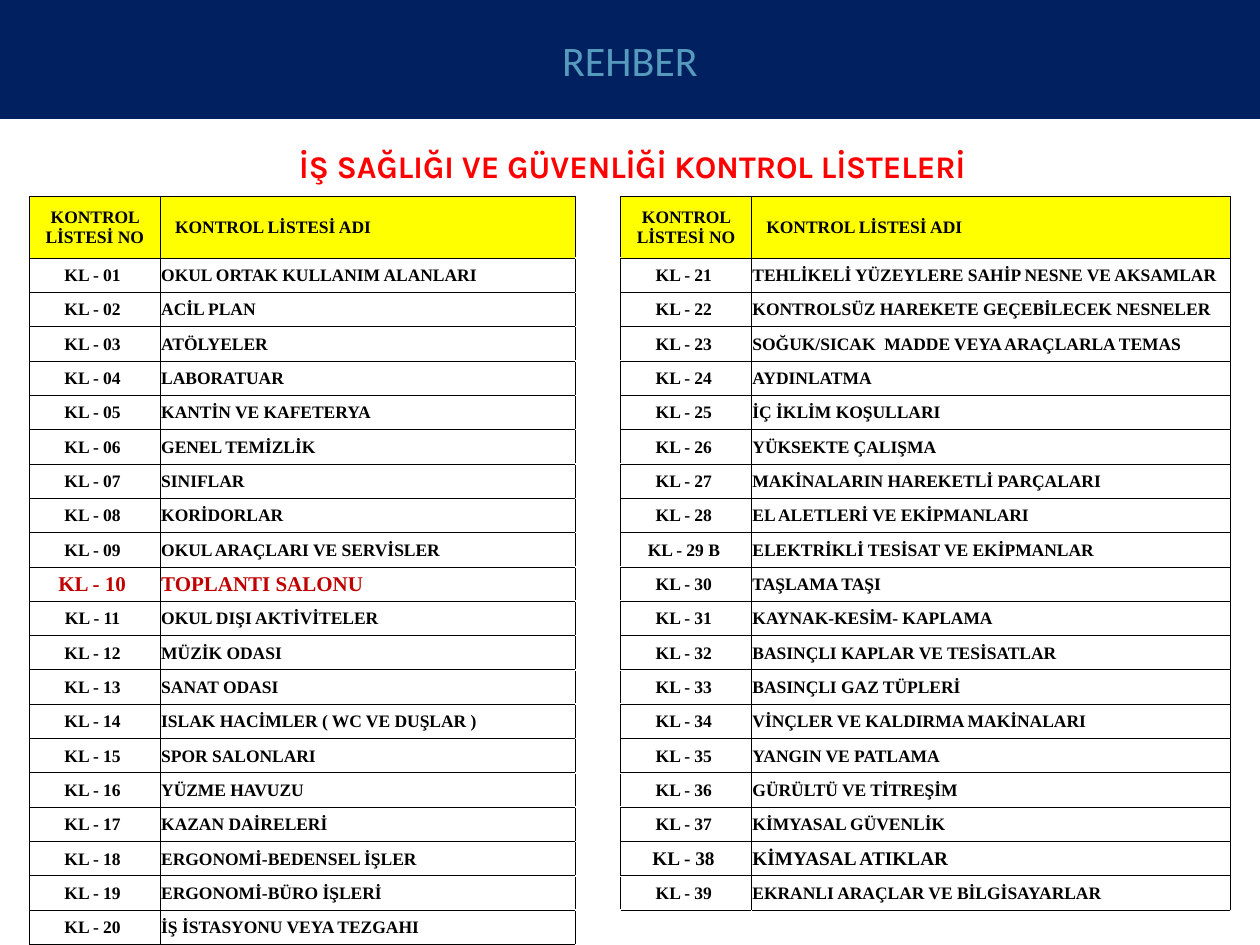
from lxml.etree import SubElement
from pptx import Presentation
from pptx.dml.color import RGBColor
from pptx.enum.shapes import MSO_SHAPE
from pptx.enum.text import MSO_ANCHOR, PP_ALIGN
from pptx.oxml import parse_xml
from pptx.oxml.ns import nsdecls, qn
from pptx.util import Cm, Pt

COLORS = {
    "navy": "002060", "blue": "569BBE", "red": "FF0000", "dark_red": "C00000",
    "yellow": "FFFF00", "black": "000000",
}
BANNER = "REHBER"
HEADING = "İŞ SAĞLIĞI VE GÜVENLİĞİ KONTROL LİSTELERİ"
HEADERS = ("KONTROL LİSTESİ NO", "KONTROL LİSTESİ ADI")
CHECKLISTS = [
    "OKUL ORTAK KULLANIM ALANLARI",
    "ACİL PLAN",
    "ATÖLYELER",
    "LABORATUAR",
    "KANTİN VE KAFETERYA",
    "GENEL TEMİZLİK",
    "SINIFLAR",
    "KORİDORLAR",
    "OKUL ARAÇLARI VE SERVİSLER",
    "TOPLANTI SALONU",
    "OKUL DIŞI AKTİVİTELER",
    "MÜZİK ODASI",
    "SANAT ODASI",
    "ISLAK HACİMLER ( WC VE DUŞLAR )",
    "SPOR SALONLARI",
    "YÜZME HAVUZU",
    "KAZAN DAİRELERİ",
    "ERGONOMİ-BEDENSEL İŞLER",
    "ERGONOMİ-BÜRO İŞLERİ",
    "İŞ İSTASYONU VEYA TEZGAHI",
    "TEHLİKELİ YÜZEYLERE SAHİP NESNE VE AKSAMLAR",
    "KONTROLSÜZ HAREKETE GEÇEBİLECEK NESNELER",
    "SOĞUK/SICAK  MADDE VEYA ARAÇLARLA TEMAS",
    "AYDINLATMA",
    "İÇ İKLİM KOŞULLARI",
    "YÜKSEKTE ÇALIŞMA",
    "MAKİNALARIN HAREKETLİ PARÇALARI",
    "EL ALETLERİ VE EKİPMANLARI",
    "ELEKTRİKLİ TESİSAT VE EKİPMANLAR",
    "TAŞLAMA TAŞI",
    "KAYNAK-KESİM- KAPLAMA",
    "BASINÇLI KAPLAR VE TESİSATLAR",
    "BASINÇLI GAZ TÜPLERİ",
    "VİNÇLER VE KALDIRMA MAKİNALARI",
    "YANGIN VE PATLAMA",
    "GÜRÜLTÜ VE TİTREŞİM",
    "KİMYASAL GÜVENLİK",
    "KİMYASAL ATIKLAR",
    "EKRANLI ARAÇLAR VE BİLGİSAYARLAR",
]
SUFFIXES = {29: "B "}
EMPHASIS = {10: (12, "dark_red"), 38: (11, "black")}
PER_SIDE = 20
COL_WIDTHS = (2.64, 8.37, 0.91, 2.64, 9.66)
GAP_COL = 2
TABLE_LEFT, TABLE_TOP, TABLE_HEIGHT, HEADER_HEIGHT = 0.59, 3.96, 15.1, 1.24
HEADER_INDENT = 0.3


def rgb(name):
    return RGBColor.from_string(COLORS[name])


def write(tf, text, font, size, color, bold=False, align=PP_ALIGN.CENTER):
    tf.word_wrap = True
    p = tf.paragraphs[0]
    p.text = text
    p.alignment = align
    for r in p.runs:
        r.font.name = font
        r.font.size = Pt(size)
        r.font.bold = bold
        r.font.color.rgb = rgb(color)


def set_borders(cell, sides):
    tcPr = cell._tc.get_or_add_tcPr()
    for i, side in enumerate(sides):
        tcPr.insert(i, parse_xml(
            f'<a:ln{side} {nsdecls("a")} w="6350"><a:solidFill>'
            f'<a:srgbClr val="{COLORS["black"]}"/></a:solidFill></a:ln{side}>'))


def write_pair(table, row, first_col, texts, size=10, color="black"):
    for i, align in enumerate((PP_ALIGN.CENTER, PP_ALIGN.LEFT)):
        cell = table.cell(row, first_col + i)
        write(cell.text_frame, texts[i], "Times New Roman", size, color, True, align)
        set_borders(cell, "LRTB")


def prepare_cells(table):
    for cell in table.iter_cells():
        cell.margin_left = cell.margin_right = cell.margin_top = Cm(0.02)
        cell.margin_bottom = 0
        cell.vertical_anchor = MSO_ANCHOR.MIDDLE
        cell.fill.background()
        SubElement(cell.text_frame.paragraphs[0]._p, qn("a:endParaRPr"), sz="1000")


def add_checklists(slide):
    table = slide.shapes.add_table(
        PER_SIDE + 1, len(COL_WIDTHS), Cm(TABLE_LEFT), Cm(TABLE_TOP),
        Cm(sum(COL_WIDTHS)), Cm(TABLE_HEIGHT)).table
    table.first_row = table.horz_banding = False
    for col, width in zip(table.columns, COL_WIDTHS):
        col.width = Cm(width)
    for row in table.rows:
        row.height = Cm((TABLE_HEIGHT - HEADER_HEIGHT) / PER_SIDE)
    table.rows[0].height = Cm(HEADER_HEIGHT)
    prepare_cells(table)

    for first_col in (0, GAP_COL + 1):
        write_pair(table, 0, first_col, HEADERS)
        table.cell(0, first_col + 1).margin_left = Cm(HEADER_INDENT)
        for col in (first_col, first_col + 1):
            table.cell(0, col).fill.solid()
            table.cell(0, col).fill.fore_color.rgb = rgb("yellow")

    for i, name in enumerate(CHECKLISTS):
        side, row = divmod(i, PER_SIDE)
        number = i + 1
        code = f"KL - {number:02d} {SUFFIXES.get(number, '')}"
        size, color = EMPHASIS.get(number, (10, "black"))
        write_pair(table, row + 1, side * (GAP_COL + 1), (code, name), size, color)

    for row in range(PER_SIDE):
        set_borders(table.cell(row, GAP_COL), "LR")
    set_borders(table.cell(PER_SIDE, GAP_COL), "L")
    for col in (GAP_COL + 1, GAP_COL + 2):
        set_borders(table.cell(PER_SIDE, col), "T")


def main():
    prs = Presentation()
    prs.slide_width, prs.slide_height = Cm(25.4), Cm(19.05)
    slide = prs.slides.add_slide(prs.slide_layouts[6])

    heading = slide.shapes.add_textbox(Cm(0.05), Cm(2.34), Cm(25.4), Cm(2))
    heading.text_frame.vertical_anchor = MSO_ANCHOR.MIDDLE
    write(heading.text_frame, HEADING, "Karla", 18, "red", True)

    banner = slide.shapes.add_shape(
        MSO_SHAPE.RECTANGLE, 0, 0, prs.slide_width, Cm(2.4))
    banner.shadow.inherit = False
    banner.fill.solid()
    banner.fill.fore_color.rgb = rgb("navy")
    banner.line.fill.background()
    banner.text_frame.vertical_anchor = MSO_ANCHOR.MIDDLE
    write(banner.text_frame, BANNER, "Calibri", 24, "blue")

    add_checklists(slide)
    prs.save("out.pptx")


if __name__ == "__main__":
    main()
